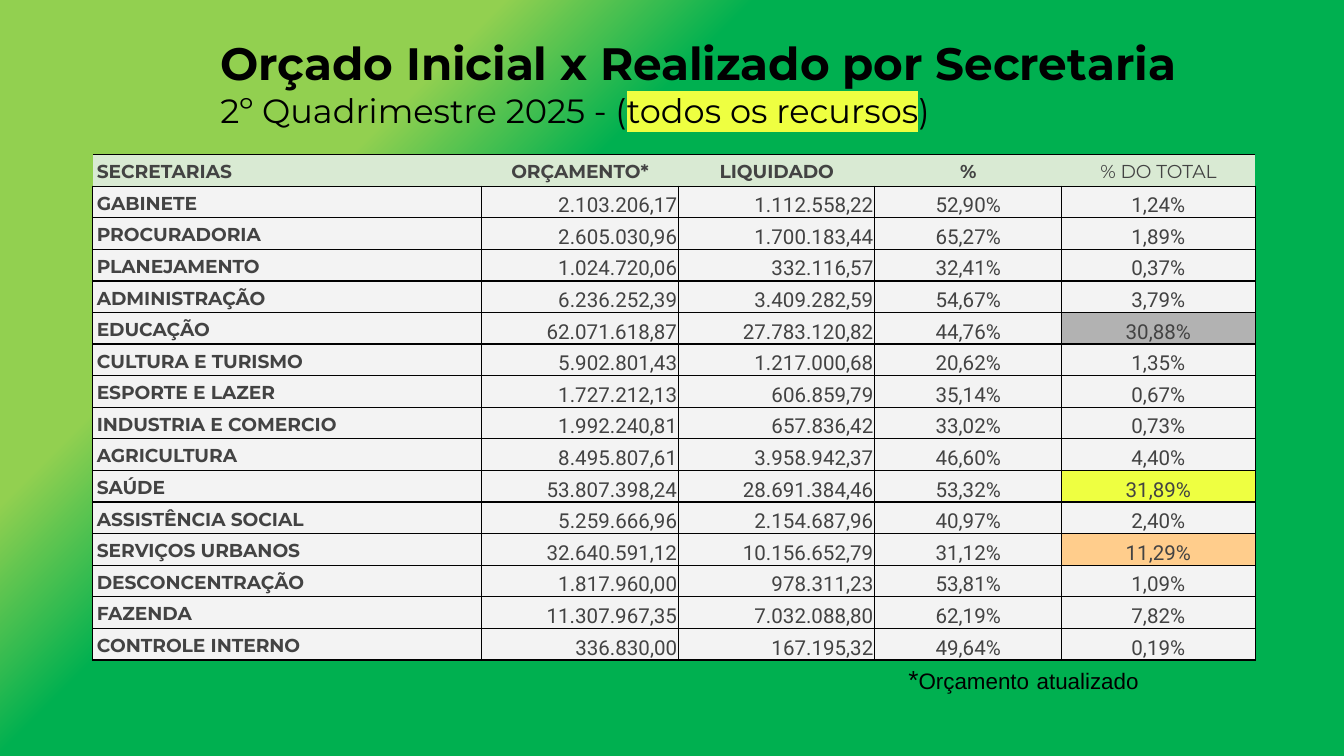
"""Build the slide comparing budgeted and settled spending by department."""
from dataclasses import dataclass
from typing import Any, NamedTuple, Optional

from lxml.etree import SubElement
from pptx import Presentation
from pptx.dml.color import RGBColor
from pptx.enum.text import MSO_ANCHOR, MSO_AUTO_SIZE, PP_ALIGN
from pptx.oxml.ns import qn
from pptx.slide import Slide
from pptx.table import _Cell
from pptx.util import Inches, Pt

LEFT, CENTER, RIGHT = PP_ALIGN.LEFT, PP_ALIGN.CENTER, PP_ALIGN.RIGHT
BOTTOM = MSO_ANCHOR.BOTTOM
NO_FIT, GROW = MSO_AUTO_SIZE.NONE, MSO_AUTO_SIZE.SHAPE_TO_FIT_TEXT


@dataclass(frozen=True)
class Theme:
    lime: str = "92D050"
    green: str = "00B050"
    black: str = "000000"
    gray: str = "434343"
    mint: str = "D9EAD3"
    pale: str = "F3F3F3"
    silver: str = "B2B2B2"
    yellow: str = "EEFF41"
    peach: str = "FFCD8C"
    head: str = "Montserrat"
    digit: str = "Roboto"
    note: str = "Arial"
    title_size: float = 24.3
    sub_size: float = 18
    label_size: float = 10
    digit_size: float = 11
    star_size: float = 14
    note_size: float = 12
    line: float = 0.75


class Piece(NamedTuple):
    text: str
    font: str
    size: float
    color: str
    bold: bool = False
    mark: Optional[str] = None


class Column(NamedTuple):
    name: str
    width: float
    align: Any
    head_align: Any = CENTER
    head_bold: bool = True


class Entry(NamedTuple):
    name: str
    budget: str
    spent: str
    rate: str
    share: str


THEME = Theme()
COLUMNS = [
    Column("SECRETARIAS", 2.89, LEFT, LEFT),
    Column("ORÇAMENTO*", 1.47, RIGHT),
    Column("LIQUIDADO", 1.46, RIGHT),
    Column("%", 1.39, CENTER),
    Column("% DO TOTAL", 1.44, CENTER, head_bold=False),
]
ENTRIES = [
    Entry("GABINETE", "2.103.206,17", "1.112.558,22", "52,90%", "1,24%"),
    Entry("PROCURADORIA", "2.605.030,96", "1.700.183,44", "65,27%", "1,89%"),
    Entry("PLANEJAMENTO", "1.024.720,06", "332.116,57", "32,41%", "0,37%"),
    Entry("ADMINISTRAÇÃO", "6.236.252,39", "3.409.282,59", "54,67%", "3,79%"),
    Entry("EDUCAÇÃO", "62.071.618,87", "27.783.120,82", "44,76%", "30,88%"),
    Entry("CULTURA E TURISMO", "5.902.801,43", "1.217.000,68", "20,62%", "1,35%"),
    Entry("ESPORTE E LAZER", "1.727.212,13", "606.859,79", "35,14%", "0,67%"),
    Entry("INDUSTRIA E COMERCIO", "1.992.240,81", "657.836,42", "33,02%", "0,73%"),
    Entry("AGRICULTURA", "8.495.807,61", "3.958.942,37", "46,60%", "4,40%"),
    Entry("SAÚDE", "53.807.398,24", "28.691.384,46", "53,32%", "31,89%"),
    Entry("ASSISTÊNCIA SOCIAL", "5.259.666,96", "2.154.687,96", "40,97%", "2,40%"),
    Entry("SERVIÇOS URBANOS", "32.640.591,12", "10.156.652,79", "31,12%", "11,29%"),
    Entry("DESCONCENTRAÇÃO", "1.817.960,00", "978.311,23", "53,81%", "1,09%"),
    Entry("FAZENDA", "11.307.967,35", "7.032.088,80", "62,19%", "7,82%"),
    Entry("CONTROLE INTERNO", "336.830,00", "167.195,32", "49,64%", "0,19%"),
]
MARKS = {"EDUCAÇÃO": THEME.silver, "SAÚDE": THEME.yellow, "SERVIÇOS URBANOS": THEME.peach}
ROW_HEIGHT = 0.23
LABEL_PAD = 1.5 / 72


def apply(target: Any, values: dict[str, Any]) -> None:
    for name, value in values.items():
        setattr(target, name, value)


def write(para: Any, piece: Piece) -> None:
    run = para.add_run()
    run.text = piece.text
    run.font.color.rgb = RGBColor.from_string(piece.color)
    apply(run.font, {"name": piece.font, "size": Pt(piece.size), "bold": piece.bold})
    if piece.mark:
        props = run.font._element
        light = SubElement(props, qn("a:highlight"))
        SubElement(light, qn("a:srgbClr"), val=piece.mark)
        props.find(qn("a:solidFill")).addnext(light)


def edge(cell: _Cell, drawn: str) -> None:
    props = cell._tc.get_or_add_tcPr()
    for side in "LRTB":
        line = SubElement(props, qn(f"a:ln{side}"), w=str(Pt(THEME.line)))
        if side in drawn:
            fill = SubElement(line, qn("a:solidFill"))
            SubElement(fill, qn("a:srgbClr"), val=THEME.black)
        else:
            SubElement(line, qn("a:noFill"))


def draw_cell(cell: _Cell, piece: Piece, align: Any, fill: str, sides: str = "LRTB") -> None:
    label = piece.font == THEME.head
    side, top, base = (0.03, LABEL_PAD, LABEL_PAD) if label else (0.01, 0.01, 0)
    apply(cell, {
        "vertical_anchor": BOTTOM,
        "margin_left": Inches(side),
        "margin_right": Inches(side),
        "margin_top": Inches(top),
        "margin_bottom": Inches(base),
    })
    para = cell.text_frame.paragraphs[0]
    apply(para, {"alignment": align, "line_spacing": 1.15 if label else 1.0})
    write(para, piece)
    edge(cell, sides)
    cell.fill.solid()
    cell.fill.fore_color.rgb = RGBColor.from_string(fill)


def draw_back(slide: Slide) -> None:
    fill = slide.background.fill
    fill.gradient()
    fill.gradient_angle = 315
    for stop, color, place in zip(fill.gradient_stops, (THEME.lime, THEME.green), (0.24, 0.36)):
        stop.color.rgb = RGBColor.from_string(color)
        stop.position = place


def draw_title(slide: Slide) -> None:
    title = slide.shapes.title
    apply(title, {"left": Inches(1.54), "top": Inches(0.16),
                  "width": Inches(8.12), "height": Inches(0.86)})
    apply(title.text_frame, {"vertical_anchor": BOTTOM, "word_wrap": True, "auto_size": NO_FIT})
    para = title.text_frame.paragraphs[0]
    apply(para, {"alignment": LEFT, "line_spacing": 1.0})
    write(para, Piece("Orçado Inicial x Realizado por Secretaria",
                      THEME.head, THEME.title_size, THEME.black, True))
    para.add_line_break()
    for text, mark in (("2º Quadrimestre 2025 - (", None),
                       ("todos os recursos", THEME.yellow), (")", None)):
        write(para, Piece(text, THEME.head, THEME.sub_size, THEME.black, mark=mark))


def draw_table(slide: Slide) -> None:
    count = len(ENTRIES) + 1
    width = sum(column.width for column in COLUMNS)
    table = slide.shapes.add_table(count, len(COLUMNS), Inches(0.69), Inches(1.15),
                                   Inches(width), Inches(ROW_HEIGHT * count)).table
    table.horz_banding = False
    for row in table.rows:
        row.height = Inches(ROW_HEIGHT)
    for col, column in enumerate(COLUMNS):
        table.columns[col].width = Inches(column.width)
        head = Piece(column.name, THEME.head, THEME.label_size, THEME.gray, column.head_bold)
        draw_cell(table.cell(0, col), head, column.head_align, THEME.mint, "TB")
        font, size = ((THEME.digit, THEME.digit_size) if col
                      else (THEME.head, THEME.label_size))
        for row, entry in enumerate(ENTRIES, 1):
            last = col == len(COLUMNS) - 1
            fill = MARKS.get(entry.name, THEME.pale) if last else THEME.pale
            piece = Piece(entry[col], font, size, THEME.gray, col == 0)
            draw_cell(table.cell(row, col), piece, column.align, fill)


def draw_note(slide: Slide) -> None:
    frame = slide.shapes.add_textbox(Inches(6.66), Inches(4.89),
                                     Inches(2.68), Inches(0.34)).text_frame
    apply(frame, {"word_wrap": True, "auto_size": GROW})
    for text, size in (("*", THEME.star_size), ("Orçamento", THEME.note_size),
                       (" ", THEME.star_size), ("atualizado", THEME.note_size)):
        write(frame.paragraphs[0], Piece(text, THEME.note, size, THEME.black))


def main() -> None:
    deck = Presentation()
    apply(deck, {"slide_width": Inches(10), "slide_height": Inches(10 * 9 / 16)})
    slide = deck.slides.add_slide(deck.slide_layouts[5])
    for draw in (draw_back, draw_title, draw_table, draw_note):
        draw(slide)
    deck.save("out.pptx")


if __name__ == "__main__":
    main()
